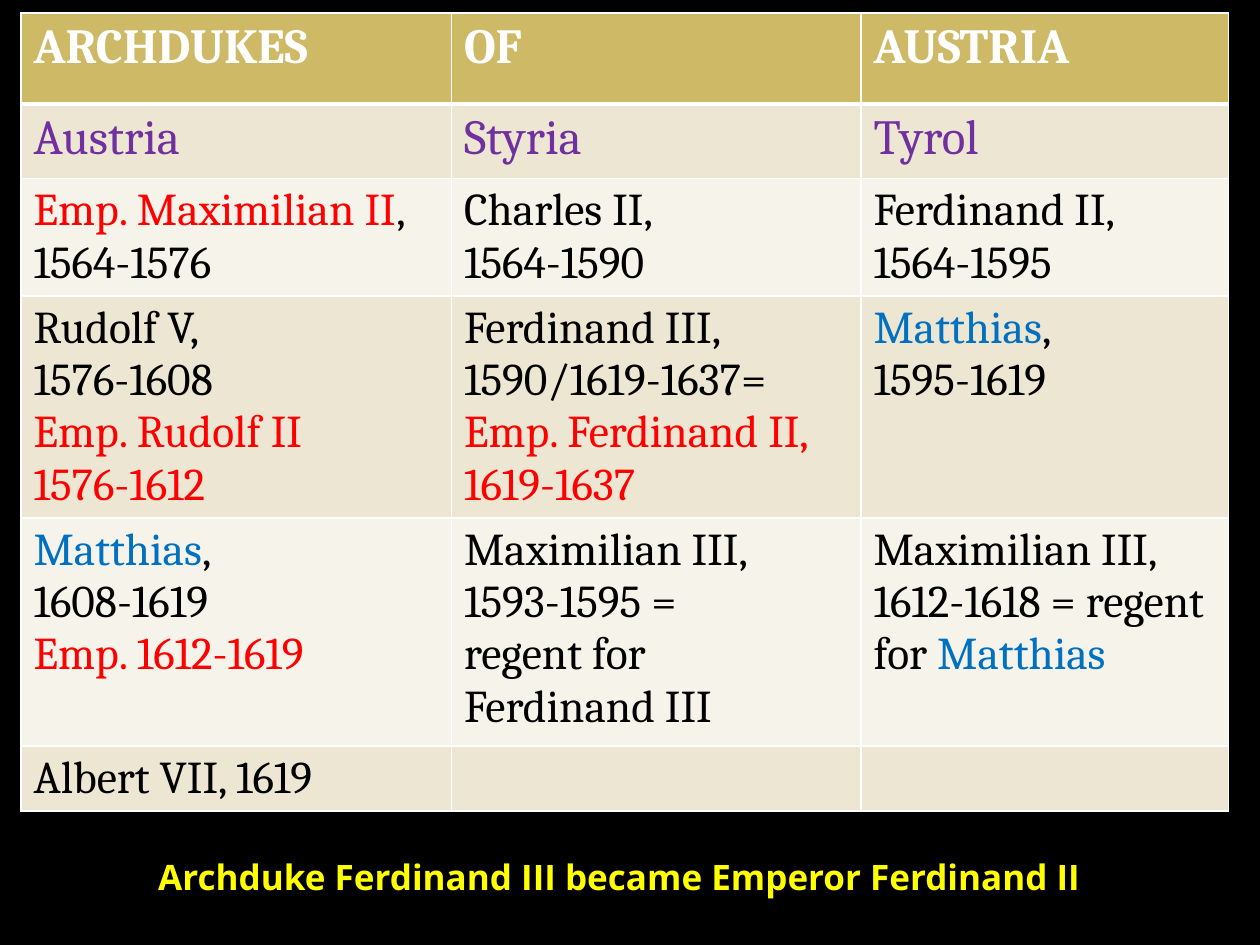
import pptx
import pptx.dml.color
import pptx.enum.text
import pptx.oxml
import pptx.oxml.ns
import pptx.util

Pt = pptx.util.Pt
RGBColor = pptx.dml.color.RGBColor

BLACK = RGBColor(0x00, 0x00, 0x00)
WHITE = RGBColor(0xFF, 0xFF, 0xFF)
YELLOW = RGBColor(0xFF, 0xFF, 0x00)
PURPLE = RGBColor(0x70, 0x30, 0xA0)
RED = RGBColor(0xFF, 0x00, 0x00)
BLUE = RGBColor(0x00, 0x70, 0xC0)
GOLD = RGBColor(0xCE, 0xB9, 0x66)
SAND = RGBColor(0xED, 0xE6, 0xD3)
CREAM = RGBColor(0xF6, 0xF3, 0xEA)

# Content: a cell is a list of paragraphs, a paragraph a list of (text, colour)
HEADINGS = ["ARCHDUKES", "OF", "AUSTRIA"]
LANDS = ["Austria", "Styria", "Tyrol"]
REIGNS = [
    [
        [[("Emp. Maximilian II", RED), (", 1564-1576", BLACK)]],
        [[("Charles II,", BLACK)], [("1564-1590", BLACK)]],
        [[("Ferdinand II, 1564-1595", BLACK)]],
    ],
    [
        [[("Rudolf V,", BLACK)], [("1576-1608", BLACK)],
         [("Emp. Rudolf II", RED)], [("1576-1612", RED)]],
        [[("Ferdinand III,", BLACK)], [("1590/1619-1637=", BLACK)],
         [("Emp. Ferdinand II, 1619-1637", RED)]],
        [[("Matthias", BLUE), (",", BLACK)], [("1595-1619", BLACK)]],
    ],
    [
        [[("Matthias", BLUE), (",", BLACK)], [("1608-1619", BLACK)],
         [("Emp. 1612-1619", RED)]],
        [[("Maximilian III,", BLACK)], [("1593-1595 =", BLACK)],
         [("regent for", BLACK)], [("Ferdinand III", BLACK)]],
        [[("Maximilian III, 1612-1618 = regent for ", BLACK),
          ("Matthias", BLUE)]],
    ],
    [[[("Albert VII, 1619", BLACK)]], [], []],
]
CAPTION = "Archduke Ferdinand III became Emperor Ferdinand II"

COLUMN_WIDTHS = [246, 234, 210]
ROW_HEIGHTS = [52, 42.5, 62.5, 125.5, 130.5, 34]


def format_run(run, font, size, colour, bold):
    run.font.name = font
    run.font.size = Pt(size)
    run.font.color.rgb = colour
    run.font.bold = bold


def write_cell(cell, paragraphs, size, bold):
    frame = cell.text_frame
    for index, pieces in enumerate(paragraphs):
        paragraph = frame.paragraphs[0] if index == 0 else frame.add_paragraph()
        for text, colour in pieces:
            run = paragraph.add_run()
            run.text = text
            format_run(run, "Cambria", size, colour, bold)


def draw_borders(cell, widths):
    """Put white lines around a cell; borders come before the fill."""
    properties = cell._tc.get_or_add_tcPr()
    for position, (side, width) in enumerate(widths.items()):
        properties.insert(position, pptx.oxml.parse_xml(
            f'<a:{side} {pptx.oxml.ns.nsdecls("a")} w="{Pt(width)}">'
            f'<a:solidFill><a:srgbClr val="{WHITE}"/></a:solidFill></a:{side}>'))


presentation = pptx.Presentation()
presentation.slide_width, presentation.slide_height = Pt(720), Pt(540)
slide = presentation.slides.add_slide(presentation.slide_layouts[6])
slide.background.fill.solid()
slide.background.fill.fore_color.rgb = BLACK

# Table of archdukes
rows = [[[[(text, WHITE)]] for text in HEADINGS],
        [[[(text, PURPLE)]] for text in LANDS]] + REIGNS
archdukes = slide.shapes.add_table(
    len(rows), len(COLUMN_WIDTHS), Pt(12), Pt(7.5),
    Pt(sum(COLUMN_WIDTHS)), Pt(sum(ROW_HEIGHTS))).table
for column, width in zip(archdukes.columns, COLUMN_WIDTHS):
    column.width = Pt(width)
for row, height in zip(archdukes.rows, ROW_HEIGHTS):
    row.height = Pt(height)

for r, row in enumerate(rows):
    band = GOLD if r == 0 else SAND if r % 2 else CREAM
    for c, paragraphs in enumerate(row):
        cell = archdukes.cell(r, c)
        cell.fill.solid()
        cell.fill.fore_color.rgb = band
        write_cell(cell, paragraphs, 28 if r < 2 else 26, r == 0)
        draw_borders(cell, {"lnL": 1, "lnR": 1,
                            "lnT": 3 if r == 1 else 1,
                            "lnB": 3 if r == 0 else 1})

# Caption below the table
caption = slide.shapes.add_textbox(Pt(30), Pt(480), Pt(648), Pt(42)).text_frame
caption.word_wrap = True
caption.vertical_anchor = pptx.enum.text.MSO_ANCHOR.MIDDLE
caption.text = CAPTION
caption.paragraphs[0].alignment = pptx.enum.text.PP_ALIGN.CENTER
format_run(caption.paragraphs[0].runs[0], "Open Sans", 20, YELLOW, True)

presentation.save("out.pptx")
